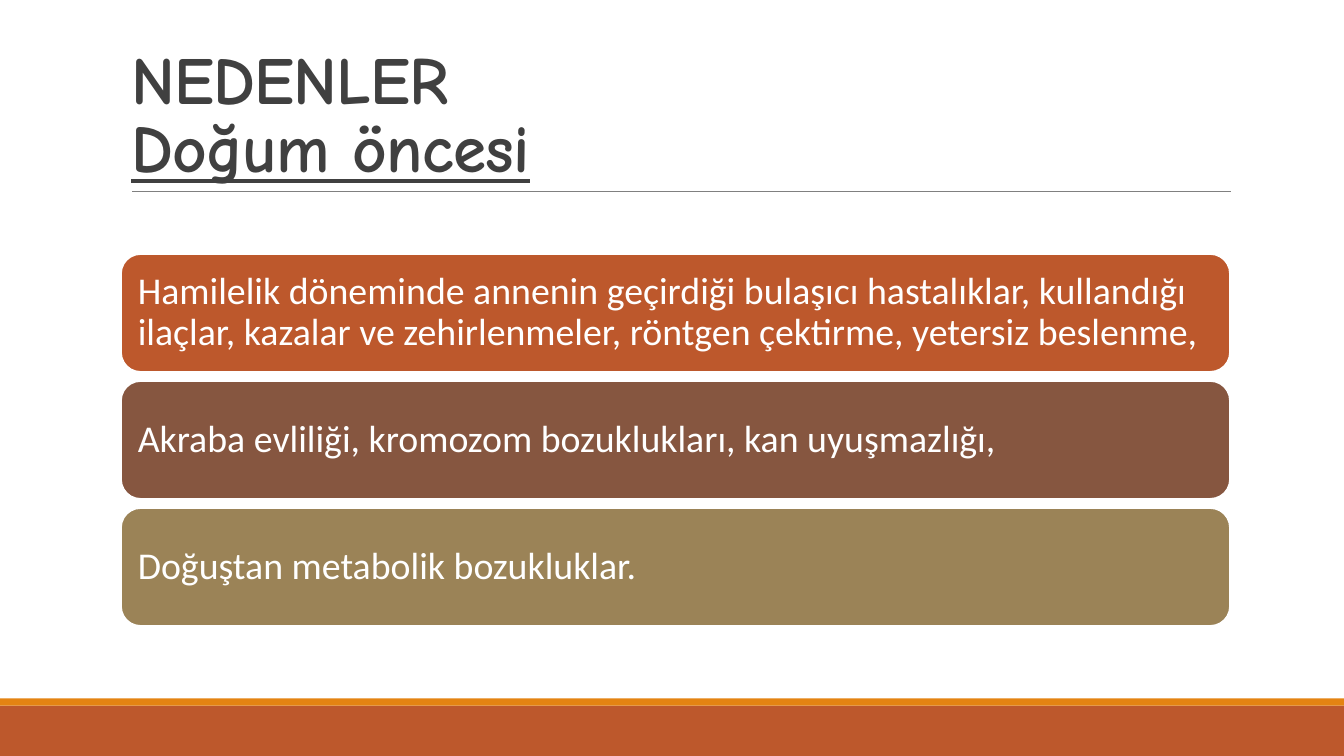
from pptx import Presentation
from pptx import util as u
from pptx.dml.color import RGBColor
from pptx.enum import shapes, text
from pptx.oxml.ns import qn
from lxml import etree

PX = 9144  # 100 px to the inch


def box(kind, x, y, w, h, fill):
    shape = slide.shapes.add_shape(kind, x * PX, y * PX, w * PX, h * PX)
    shape.shadow.inherit = False
    shape.fill.solid()
    shape.fill.fore_color.rgb = RGBColor.from_string(fill)
    shape.line.fill.background()
    return shape


def style(run, face, size, hue):
    run.font.name = face
    run.font.size = u.Pt(size)
    run.font.color.rgb = RGBColor.from_string(hue)


deck = Presentation()
deck.slide_width, deck.slide_height = 1333 * PX, 750 * PX
slide = deck.slides.add_slide(deck.slide_layouts[5])

# Footer bands and title rule
box(shapes.MSO_SHAPE.RECTANGLE, 0, 700, 1333, 50, "BD582C")
box(shapes.MSO_SHAPE.RECTANGLE, 0, 693, 1333, 7, "E48312")
rule = slide.shapes.add_connector(
    shapes.MSO_CONNECTOR.STRAIGHT, 131 * PX, 190 * PX, 1221 * PX, 190 * PX)
rule.line.color.rgb = RGBColor.from_string("808080")
rule.line.width = u.Pt(0.5)
etree.SubElement(rule.line._get_or_add_ln().getparent(), qn("a:effectLst"))

# Title
title = slide.shapes.title
title.left, title.top = 120 * PX, 31 * PX
title.width, title.height = 1100 * PX, 159 * PX
frame = title.text_frame
frame.auto_size = text.MSO_AUTO_SIZE.NONE
frame.vertical_anchor = text.MSO_ANCHOR.BOTTOM
para = frame.paragraphs[0]
para.alignment = text.PP_ALIGN.LEFT
para.line_spacing = 0.85
head = para.add_run()
head.text = "NEDENLER"
para.add_line_break()
sub = para.add_run()
sub.text = "Doğum öncesi"
sub.font.underline = True
for run in (head, sub):
    style(run, "Comic Neue", 48, "404040")
    run.font.bold = True
    run.font._element.set("spc", "-50")

# Causes
causes = [
    ("BD582C", "Hamilelik döneminde annenin geçirdiği bulaşıcı hastalıklar, "
               "kullandığı ilaçlar, kazalar ve zehirlenmeler, röntgen çektirme, "
               "yetersiz beslenme,"),
    ("865640", "Akraba evliliği, kromozom bozuklukları, kan uyuşmazlığı,"),
    ("9B8357", "Doğuştan metabolik bozukluklar."),
]
for i, (fill, words) in enumerate(causes):
    card = box(shapes.MSO_SHAPE.ROUNDED_RECTANGLE,
               120, 252 + 126 * i, 1100, 117, fill)
    card.line.color.rgb = RGBColor.from_string("FFFFFF")
    card.line.width = u.Pt(1.25)
    frame = card.text_frame
    frame.word_wrap = True
    frame.vertical_anchor = text.MSO_ANCHOR.MIDDLE
    frame.margin_left = frame.margin_right = 11 * PX
    frame.margin_top = frame.margin_bottom = 11 * PX
    para = frame.paragraphs[0]
    para.alignment = text.PP_ALIGN.LEFT
    para.line_spacing = 0.9
    run = para.add_run()
    run.text = words
    style(run, "Calibri", 27, "FFFFFF")

deck.save("out.pptx")
